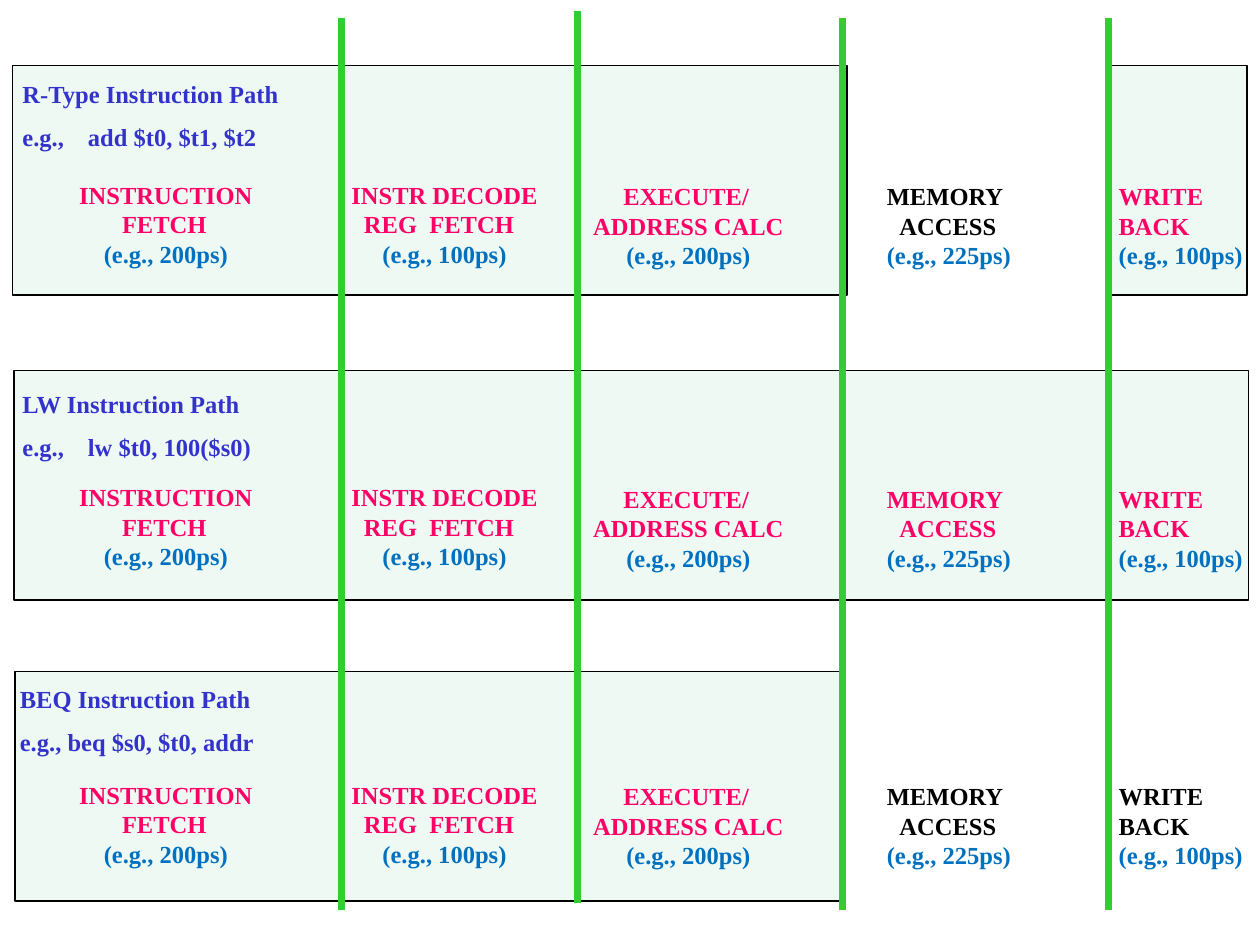
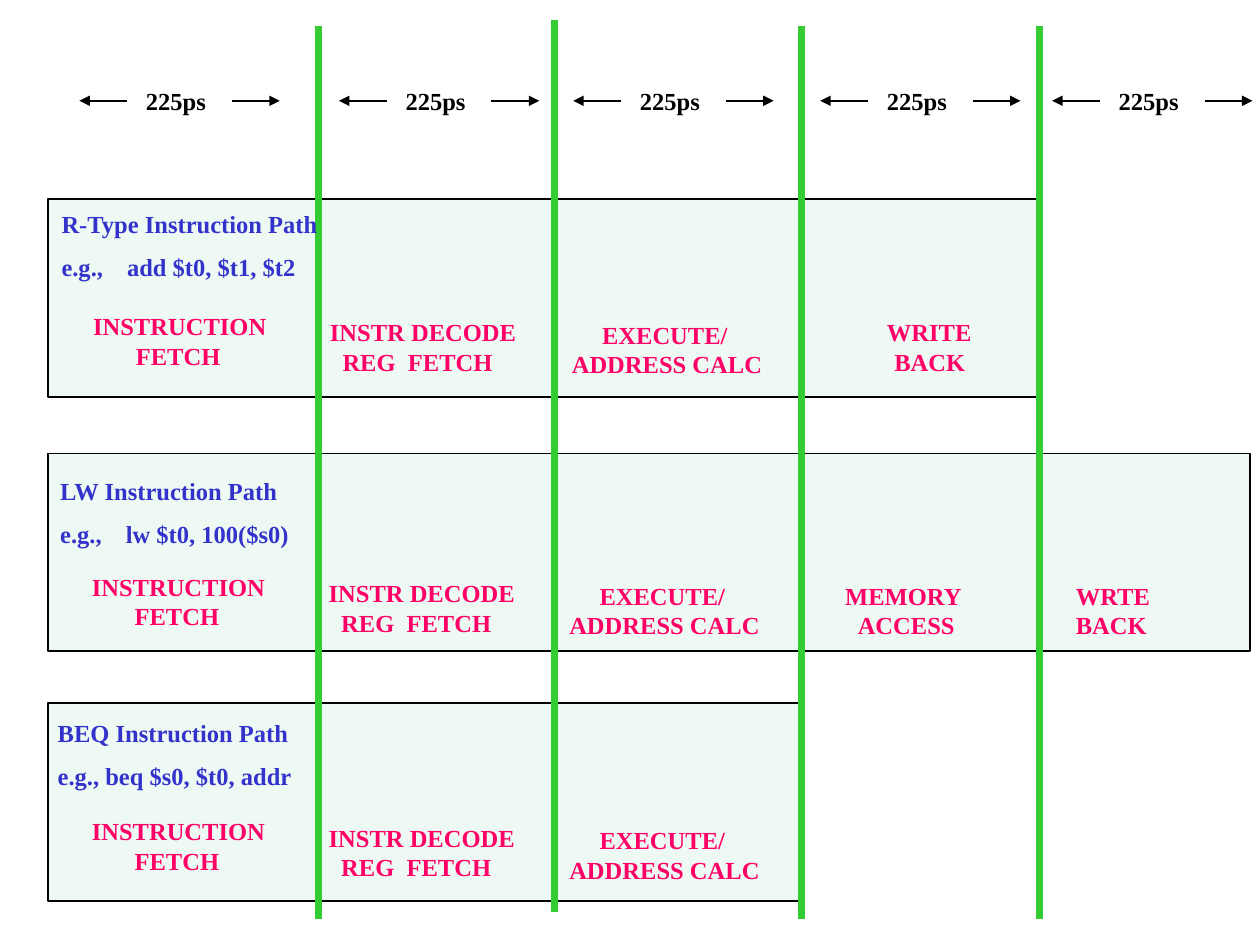
from lxml import etree
from pptx import Presentation
from pptx.dml.color import RGBColor
from pptx.enum.shapes import MSO_CONNECTOR, MSO_SHAPE
from pptx.enum.text import MSO_AUTO_SIZE, PP_ALIGN
from pptx.oxml.ns import qn
from pptx.util import Pt

PX = 9144  # 100 px to the inch
FONT = "Times New Roman"
rgb = RGBColor.from_string
MINT, GREEN, BLACK = "EEF9F4", "33CC33", "000000"
INDIGO, PINK, BLUE = "3333CC", "FF0066", "0070C0"


def add_text(s, x, y, w, h, lines, wrap=False):
    """Add bold text; each line is (text, colour, indent in px, or None to centre)."""
    tf = s.shapes.add_textbox(x * PX, y * PX, w * PX, h * PX).text_frame
    tf.word_wrap = wrap
    tf.auto_size = MSO_AUTO_SIZE.SHAPE_TO_FIT_TEXT
    tf.text = "\n".join(text for text, _, _ in lines)
    for p, (_, color, indent) in zip(tf.paragraphs, lines):
        if indent is None:
            p.alignment = PP_ALIGN.CENTER
        elif indent:
            p._p.get_or_add_pPr().set("marL", str(indent * PX))
        font = p.runs[0].font
        font.name, font.size, font.bold = FONT, Pt(14), True
        font.color.rgb = rgb(color)
    return tf


def add_line(s, x1, y1, x2, y2, color, width, arrow=False):
    c = s.shapes.add_connector(MSO_CONNECTOR.STRAIGHT, x1 * PX, y1 * PX, x2 * PX, y2 * PX)
    c.line.color.rgb = rgb(color)
    c.line.width = Pt(width)
    if arrow:
        etree.SubElement(c.line._get_or_add_ln(), qn("a:tailEnd"), type="triangle")
    etree.SubElement(c._element.spPr, qn("a:effectLst"))


# Stage: box width, first line, its indent, second line, its indent, time
STAGES = {
    "fetch": (159, "INSTRUCTION", 0, "FETCH", 34, "200ps"),
    "decode": (169, "INSTR DECODE", 0, "REG  FETCH", 10, "100ps"),
    "execute": (173, "EXECUTE/", 24, "ADDRESS CALC", 0, "200ps"),
    "memory": (120, "MEMORY", 0, "ACCESS", 10, "225ps"),
    "write": (120, "WRITE", 0, "BACK", 0, "100ps"),
    "write_centred": (88, "WRITE", 0, "BACK", 6, "100ps"),
    "wrte": (80, "WRTE", 0, "BACK", 0, "100ps"),
}
PATHS = [
    ("R-Type Instruction Path", "e.g.,\tadd $t0, $t1, $t2"),
    ("LW Instruction Path", "e.g.,\tlw $t0, 100($s0)"),
    ("BEQ Instruction Path", "e.g., beq $s0, $t0, addr"),
]
ALL_STAGES = [("fetch", 53, 0), ("decode", 269, 0), ("execute", 461, 1),
              ("memory", 694, 1), ("write", 878, 1)]
FIRST_STAGES = [("fetch", 63, 0), ("decode", 251, 5), ("execute", 442, 7)]

# Row: path title place, top of stages, stages (name, x, y shift), idle stages
SLIDES = [
    dict(
        boxes=[(879, 52, 111, 182), (11, 294, 980, 182), (10, 52, 662, 182), (12, 533, 659, 182)],
        dividers=(271, 458, 669, 880), divider_top=14, times=True,
        rows=[(8, 58, 138, ALL_STAGES, {"memory"}),
              (8, 304, 378, ALL_STAGES, set()),
              (6, 538, 614, ALL_STAGES, {"memory", "write"})],
        clocks=(),
    ),
    dict(
        boxes=[(38, 360, 954, 157), (38, 158, 789, 157), (38, 558, 598, 157)],
        dividers=(253, 440, 636, 825), divider_top=21, times=False,
        rows=[(39, 161, 242, [("fetch", 64, 0), ("decode", 252, 5), ("execute", 444, 7),
                              ("write_centred", 694, 5)], set()),
              (38, 373, 449, FIRST_STAGES + [("memory", 661, 7), ("wrte", 844, 7)], set()),
              (36, 565, 643, FIRST_STAGES, set())],
        clocks=(106, 312, 498, 694, 878),
    ),
]

prs = Presentation()
prs.slide_width, prs.slide_height = 1000 * PX, 750 * PX

for spec_of_slide in SLIDES:
    s = prs.slides.add_slide(prs.slide_layouts[6])

    for x, y, w, h in spec_of_slide["boxes"]:
        sp = s.shapes.add_shape(MSO_SHAPE.RECTANGLE, x * PX, y * PX, w * PX, h * PX)
        sp.shadow.inherit = False
        sp.fill.solid()
        sp.fill.fore_color.rgb = rgb(MINT)
        sp.line.color.rgb = rgb(BLACK)
        sp.line.width = Pt(1)

    for i, x in enumerate(spec_of_slide["dividers"]):
        top = spec_of_slide["divider_top"] - (5 if i == 1 else 0)
        add_line(s, x, top, x, top + 708, GREEN, 4)

    for path_lines, (x, y, stage_top, stages, idle) in zip(PATHS, spec_of_slide["rows"]):
        tf = add_text(s, x, y, 224, 69, [(t, INDIGO, 0) for t in path_lines], wrap=True)
        example = tf.paragraphs[1]
        example.space_before = Pt(7.5)
        if "\t" in path_lines[1]:
            tabs = etree.SubElement(example._p.get_or_add_pPr(), qn("a:tabLst"))
            etree.SubElement(tabs, qn("a:tab"), pos=str(52 * PX), algn="l")

        for name, stage_x, shift in stages:
            w, first, indent1, second, indent2, time = STAGES[name]
            color = BLACK if name in idle else PINK
            lines = [(first, color, indent1), (second, color, indent2)]
            if spec_of_slide["times"]:
                lines.append((f"(e.g., {time})", BLUE, None))
            add_text(s, stage_x, stage_top + shift, w, 10 + 24 * len(lines), lines)

    for x in spec_of_slide["clocks"]:
        add_text(s, x, 63, 68, 34, [("225ps", BLACK, 0)])
        add_line(s, x + 78, 80, x + 116, 80, BLACK, 1, arrow=True)
        add_line(s, x - 5, 80, x - 43, 80, BLACK, 1, arrow=True)

prs.save("out.pptx")
